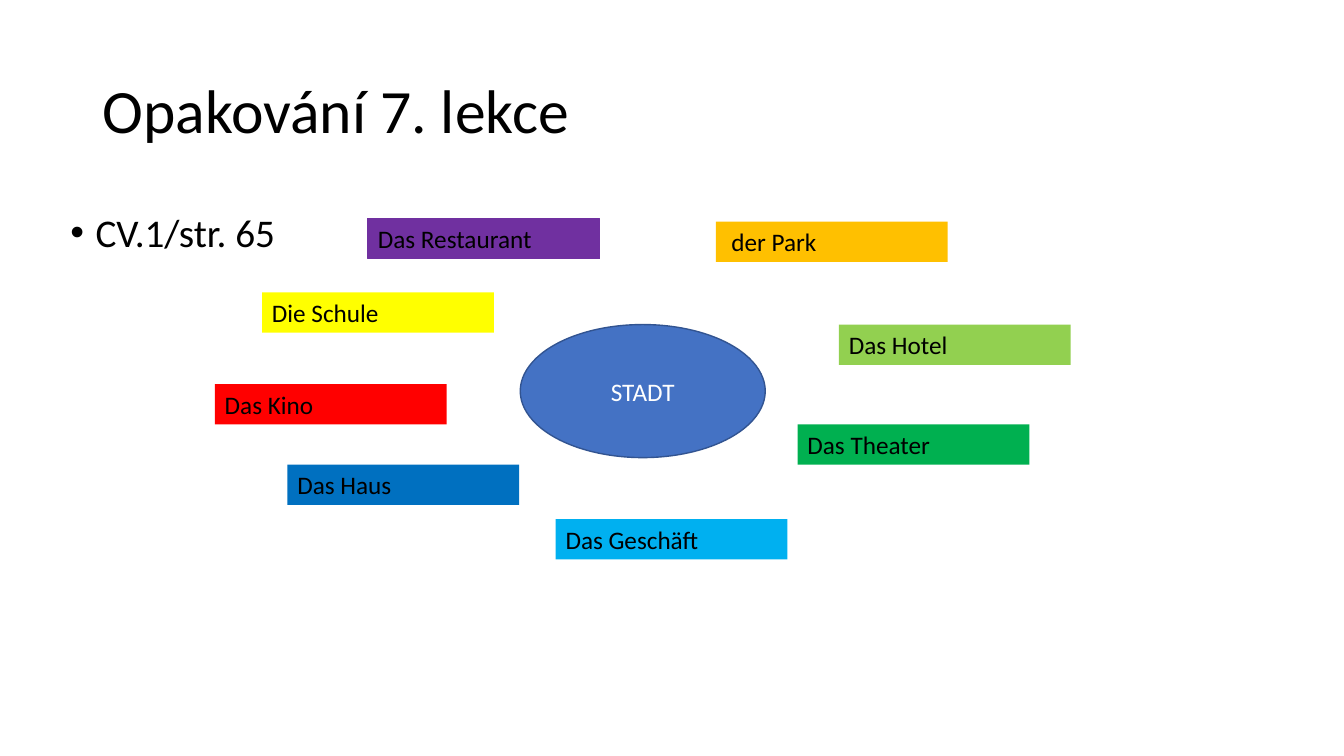
from lxml.etree import SubElement
from pptx import Presentation
from pptx.dml.color import RGBColor
from pptx.enum.shapes import MSO_SHAPE as Preset
from pptx.enum.text import MSO_ANCHOR as Anchor, MSO_AUTO_SIZE as AutoSize, PP_ALIGN as Align
from pptx.oxml.ns import qn
from pptx.util import Inches, Pt

FONT = "Calibri"
BLACK = RGBColor(0x00, 0x00, 0x00)
WHITE = RGBColor(0xFF, 0xFF, 0xFF)
BLUE = RGBColor(0x44, 0x72, 0xC4)
DARK_BLUE = RGBColor(0x32, 0x54, 0x91)
ORANGE = RGBColor(0xFF, 0xC0, 0x00)
LIGHT_GREEN = RGBColor(0x92, 0xD0, 0x50)
GREEN = RGBColor(0x00, 0xB0, 0x50)
SKY = RGBColor(0x00, 0xB0, 0xF0)
AZURE = RGBColor(0x00, 0x70, 0xC0)
RED = RGBColor(0xFF, 0x00, 0x00)
YELLOW = RGBColor(0xFF, 0xFF, 0x00)
PURPLE = RGBColor(0x70, 0x30, 0xA0)

WIDTH, HEIGHT = Inches(13.33), Inches(7.5)

# All places and sizes are percentages of the slide's width and height
CARD_SIZE = (17.25, 5.33)
PLACES = [  # word, left, top, fill, outline
    (" der Park", 53.26, 29.33, ORANGE, None),
    ("Das Hotel", 62.42, 42.93, LIGHT_GREEN, None),
    ("Das Theater", 59.34, 56.13, GREEN, None),
    ("Das Geschäft", 41.34, 68.67, SKY, None),
    ("Das Haus", 21.38, 61.47, AZURE, None),
    ("Das Kino", 15.98, 50.8, RED, None),
    ("Die Schule", 19.5, 38.67, YELLOW, None),
    ("Das Restaurant", 27.38, 28.93, PURPLE, PURPLE),
]


def box(left, top, width, height):
    """Turn percentages of the slide into lengths."""
    return (int(WIDTH * left / 100), int(HEIGHT * top / 100),
            int(WIDTH * width / 100), int(HEIGHT * height / 100))


def write(shape, text, size, color=BLACK, align=Align.LEFT, anchor=Anchor.TOP):
    frame = shape.text_frame
    frame.word_wrap = True
    frame.vertical_anchor = anchor
    paragraph = frame.paragraphs[0]
    paragraph.alignment = align
    run = paragraph.add_run()
    run.text = text
    run.font.name = FONT
    run.font.size = Pt(size)
    run.font.color.rgb = color
    return paragraph


def add_text(slide, place, text, size, anchor=Anchor.TOP):
    paragraph = write(slide.shapes.add_textbox(*box(*place)), text, size, anchor=anchor)
    paragraph.line_spacing = 0.9
    return paragraph


def make_bullet(paragraph):
    paragraph.space_before = Pt(10)
    properties = paragraph._p.get_or_add_pPr()
    properties.set("marL", str(Inches(0.25)))
    properties.set("indent", str(Inches(-0.25)))
    SubElement(properties, qn("a:buFont")).set("typeface", "Arial")
    SubElement(properties, qn("a:buChar")).set("char", "•")


def add_filled(slide, preset, place, fill, outline=None, outline_width=0.75):
    shape = slide.shapes.add_shape(preset, *box(*place))
    shape.shadow.inherit = False
    shape.fill.solid()
    shape.fill.fore_color.rgb = fill
    if outline is None:
        shape.line.fill.background()
    else:
        shape.line.color.rgb = outline
        shape.line.width = Pt(outline_width)
    return shape


def add_card(slide, word, left, top, fill, outline):
    card = add_filled(slide, Preset.RECTANGLE, (left, top, *CARD_SIZE), fill, outline)
    write(card, word, 18)
    card.text_frame.auto_size = AutoSize.SHAPE_TO_FIT_TEXT


def main():
    presentation = Presentation()
    presentation.slide_width, presentation.slide_height = WIDTH, HEIGHT
    slide = presentation.slides.add_slide(presentation.slide_layouts[6])

    # Heading and exercise reference
    add_text(slide, (6.9, 5.33, 86.27, 19.33), "Opakování 7. lekce", 44, Anchor.MIDDLE)
    make_bullet(add_text(slide, (4.5, 27.6, 86.27, 63.47), "CV.1/str. 65", 28))

    # Central topic
    topic = add_filled(slide, Preset.OVAL, (38.71, 42.93, 18.23, 17.6), BLUE, DARK_BLUE, 1)
    write(topic, "STADT", 18, WHITE, Align.CENTER, Anchor.MIDDLE)

    # Places in the town
    for place in PLACES:
        add_card(slide, *place)

    presentation.save("out.pptx")


if __name__ == "__main__":
    main()
